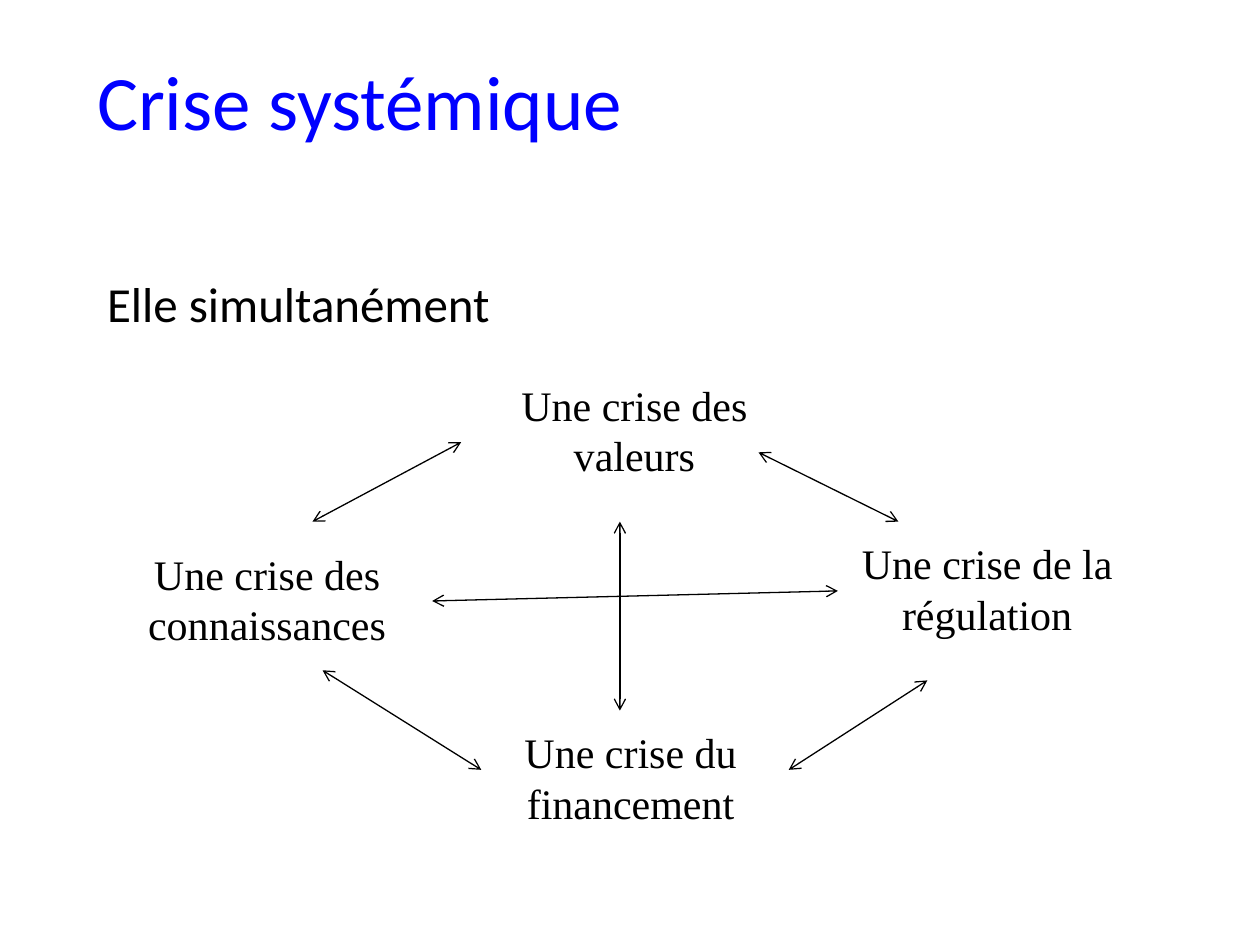
import pptx
import pptx.dml.color
import pptx.enum.shapes
import pptx.enum.text
import pptx.oxml
import pptx.oxml.ns
import pptx.util
from pptx.util import Inches

COLORS = {"title": "0000FF", "text": "000000", "line": "000000"}
ALIGN = pptx.enum.text.PP_ALIGN
ANCHOR = pptx.enum.text.MSO_ANCHOR
AUTO_SIZE = pptx.enum.text.MSO_AUTO_SIZE

CRISES = [
    ("Une crise du financement", 3.27, 5.72, 3.47),
    ("Une crise des connaissances", 0.35, 4.3, 3.54),
    ("Une crise des valeurs", 3.58, 2.96, 2.91),
    ("Une crise de la régulation", 6.1, 4.22, 3.47),
]
CRISIS_HEIGHT = 0.91

ARROWS = [
    ((4.92, 4.14), (4.92, 5.64)),
    ((3.43, 4.77), (6.65, 4.69)),
    ((2.48, 4.14), (3.66, 3.51)),
    ((6.02, 3.59), (7.13, 4.14)),
    ((2.56, 5.32), (3.82, 6.11)),
    ((6.26, 6.11), (7.36, 5.4)),
]


def color(name):
    return pptx.dml.color.RGBColor.from_string(COLORS[name])


def write_text(shape, text, size, font_name, color_name, alignment, anchor):
    text_frame = shape.text_frame
    text_frame.text = text
    text_frame.word_wrap = True
    text_frame.auto_size = AUTO_SIZE.NONE
    text_frame.vertical_anchor = anchor
    paragraph = text_frame.paragraphs[0]
    paragraph.alignment = alignment
    font = paragraph.runs[0].font
    font.size = pptx.util.Pt(size)
    font.name = font_name
    font.color.rgb = color(color_name)
    return paragraph


def fill_placeholder(shape, box, text, size, color_name, anchor):
    shape.left, shape.top, shape.width, shape.height = map(Inches, box)
    paragraph = write_text(shape, text, size, "Calibri", color_name, ALIGN.LEFT, anchor)
    paragraph.line_spacing = 0.9
    return paragraph


def remove_bullet(paragraph):
    properties = paragraph._p.get_or_add_pPr()
    properties.set("marL", "0")
    properties.set("indent", "0")
    pptx.oxml.ns.qn("a:buNone")
    properties.append(pptx.oxml.parse_xml(f'<a:buNone {pptx.oxml.ns.nsdecls("a")}/>'))


def add_crisis(slide, text, left, top, width):
    shape = slide.shapes.add_textbox(
        Inches(left), Inches(top), Inches(width), Inches(CRISIS_HEIGHT)
    )
    write_text(shape, text, 24, "Times New Roman", "text", ALIGN.CENTER, ANCHOR.TOP)
    shape.text_frame.auto_size = AUTO_SIZE.SHAPE_TO_FIT_TEXT


def add_double_arrow(slide, start, end):
    connector = slide.shapes.add_connector(
        pptx.enum.shapes.MSO_CONNECTOR.STRAIGHT, *map(Inches, start + end)
    )
    connector.line.color.rgb = color("line")
    connector.line.width = pptx.util.Pt(0.75)
    namespace = pptx.oxml.ns.nsdecls("a")
    line = connector.line._get_or_add_ln()
    for tag in ("headEnd", "tailEnd"):
        line.append(pptx.oxml.parse_xml(f'<a:{tag} {namespace} type="arrow"/>'))
    connector._element.spPr.append(pptx.oxml.parse_xml(f"<a:effectLst {namespace}/>"))


def main():
    presentation = pptx.Presentation()
    presentation.slide_width = Inches(10)
    presentation.slide_height = Inches(7.5)
    slide = presentation.slides.add_slide(presentation.slide_layouts[1])

    fill_placeholder(
        slide.shapes.title, (0.67, 0.21, 8.5, 1.25),
        "Crise systémique", 44, "title", ANCHOR.MIDDLE,
    )
    introduction = fill_placeholder(
        slide.placeholders[1], (0.75, 2.17, 8.5, 0.72),
        "Elle simultanément", 28, "text", ANCHOR.TOP,
    )
    introduction.space_before = pptx.util.Pt(10)
    remove_bullet(introduction)

    for crisis in CRISES:
        add_crisis(slide, *crisis)
    for start, end in ARROWS:
        add_double_arrow(slide, start, end)

    presentation.save("out.pptx")


if __name__ == "__main__":
    main()
